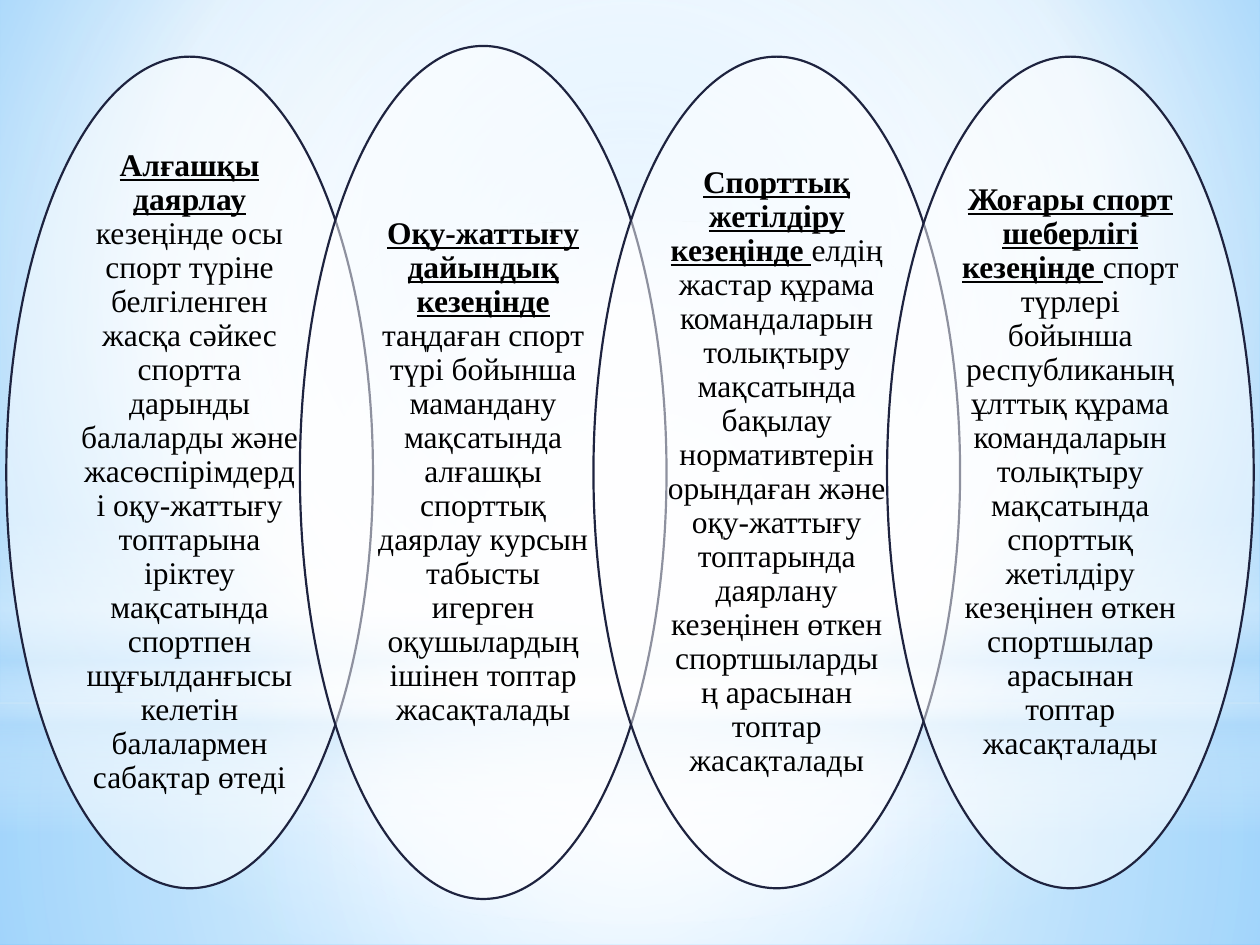
import pptx
import pptx.dml.color
import pptx.enum.shapes
import pptx.enum.text
import pptx.oxml
import pptx.oxml.ns
import pptx.util
from pptx.util import Inches

COLORS = {
    "white": "FFFFFF",
    "sky": "9ED5FF",
    "deep_sky": "5BB9FF",
    "haze": "B4DCFA",
    "outline": "1E233F",
    "text": "000000",
}
FONT = "Times New Roman"
SHAPES = pptx.enum.shapes.MSO_SHAPE
QN = pptx.oxml.ns.qn

STAGES = [
    ("Алғашқы даярлау ",
     "кезеңінде осы спорт түріне белгіленген жасқа сәйкес спортта дарынды "
     "балаларды және жасөспірімдерді оқу-жаттығу топтарына іріктеу мақсатында "
     "спортпен шұғылданғысы келетін балалармен сабақтар өтеді"),
    ("Оқу-жаттығу дайындық кезеңінде ",
     "таңдаған спорт түрі бойынша мамандану мақсатында алғашқы спорттық даярлау "
     "курсын табысты игерген оқушылардың ішінен топтар жасақталады"),
    ("Спорттық жетілдіру кезеңінде ",
     "елдің жастар құрама командаларын толықтыру мақсатында бақылау нормативтерін "
     "орындаған және оқу-жаттығу топтарында даярлану кезеңінен өткен "
     "спортшылардың арасынан топтар жасақталады"),
    ("Жоғары спорт шеберлігі кезеңінде ",
     "спорт түрлері бойынша республиканың ұлттық құрама командаларын толықтыру "
     "мақсатында спорттық жетілдіру кезеңінен өткен спортшылар арасынан топтар "
     "жасақталады"),
]


def rgb(name):
    return pptx.dml.color.RGBColor.from_string(COLORS[name])


def set_gradient(properties, stops, center=None):
    """Swap the solid fill for (position, colour, opacity) stops: radial with a center, else vertical."""
    stop_xml = "".join(
        f'<a:gs pos="{pos * 1000}"><a:srgbClr val="{COLORS[color]}">'
        f'<a:alpha val="{opacity * 1000}"/></a:srgbClr></a:gs>'
        for pos, color, opacity in stops)
    if center:
        sides = " ".join(f'{side}="{value * 1000}"' for side, value in zip("ltrb", center))
        direction = f'<a:path path="circle"><a:fillToRect {sides}/></a:path>'
    else:
        direction = '<a:lin ang="5400000" scaled="0"/>'
    gradient = pptx.oxml.parse_xml(
        f'<a:gradFill {pptx.oxml.ns.nsdecls("a")} rotWithShape="1">'
        f'<a:gsLst>{stop_xml}</a:gsLst>{direction}</a:gradFill>')
    solid = properties.find(QN("a:solidFill"))
    properties.replace(solid, gradient)


def add_plain_shape(slide, kind, box):
    shape = slide.shapes.add_shape(kind, *(Inches(length) for length in box))
    shape.shadow.inherit = False
    shape.fill.solid()
    shape.fill.fore_color.rgb = rgb("white")
    return shape


def add_backdrop(slide, width, height):
    slide.background.fill.solid()
    set_gradient(slide.element.find(".//" + QN("p:bgPr")),
                 [(0, "sky", 100), (60, "white", 100), (100, "deep_sky", 100)],
                 (20, 10, 20, 60))
    middle = (50, 50, 50, 50)
    horizon = 5.58
    layers = [
        (SHAPES.RECTANGLE, (0, horizon, width, height - horizon),
         [(0, "white", 91), (37, "white", 76), (100, "haze", 79)], middle),
        (SHAPES.RECTANGLE, (0, 0, width, horizon),
         [(0, "white", 89), (48, "white", 62), (100, "haze", 79)], middle),
        (SHAPES.RECTANGLE, (0, 4.12, width, 2.5),
         [(0, "white", 0), (29, "white", 30), (45, "haze", 40),
          (55, "white", 26), (65, "haze", 60), (100, "white", 0)], None),
        (SHAPES.OVAL, (0, 1.75, width, horizon),
         [(0, "white", 100), (56, "white", 0)], middle),
    ]
    for kind, box, stops, center in layers:
        layer = add_plain_shape(slide, kind, box)
        layer.line.fill.background()
        set_gradient(layer.element.spPr, stops, center)


def add_stage(slide, box, heading, description):
    """Translucent ellipse with its text in the inscribed rectangle."""
    left, top, width, height = box
    ellipse = add_plain_shape(slide, SHAPES.OVAL, box)
    color = ellipse.element.spPr.find(QN("a:solidFill"))[0]
    color.append(pptx.oxml.parse_xml(
        f'<a:alpha {pptx.oxml.ns.nsdecls("a")} val="50000"/>'))
    ellipse.line.color.rgb = rgb("outline")
    ellipse.line.width = pptx.util.Pt(1.25)

    inner_width, inner_height = width * 0.707, height * 0.707
    caption = slide.shapes.add_textbox(
        Inches(left + (width - inner_width) / 2), Inches(top + (height - inner_height) / 2),
        Inches(inner_width), Inches(inner_height))
    frame = caption.text_frame
    frame.word_wrap = True
    frame.vertical_anchor = pptx.enum.text.MSO_ANCHOR.MIDDLE
    frame.margin_left = frame.margin_right = Inches(0.16)
    frame.margin_top = frame.margin_bottom = Inches(0.03)
    paragraph = frame.paragraphs[0]
    paragraph.alignment = pptx.enum.text.PP_ALIGN.CENTER
    paragraph.line_spacing = 0.9
    paragraph.font.name = FONT
    paragraph.font.size = pptx.util.Pt(18)
    paragraph.font.color.rgb = rgb("text")
    for words, emphasized in ((heading, True), (description, False)):
        run = paragraph.add_run()
        run.text = words
        run.font.bold = run.font.underline = emphasized


def add_stages(slide, box):
    left, top, width, height = box
    stage_width = 2.91
    step = (width - stage_width) / (len(STAGES) - 1)
    for index, (heading, description) in enumerate(STAGES):
        extra = 0.085 if index == 1 else 0
        add_stage(slide, (left + index * step, top - extra, stage_width, height + 2 * extra),
                  heading, description)


def main():
    presentation = pptx.Presentation()
    presentation.slide_width = Inches(10)
    presentation.slide_height = Inches(7.5)
    slide = presentation.slides.add_slide(presentation.slide_layouts[6])
    add_backdrop(slide, 10, 7.5)
    add_stages(slide, (0.05, 0.45, 9.9, 6.6))
    presentation.save("out.pptx")


if __name__ == "__main__":
    main()
